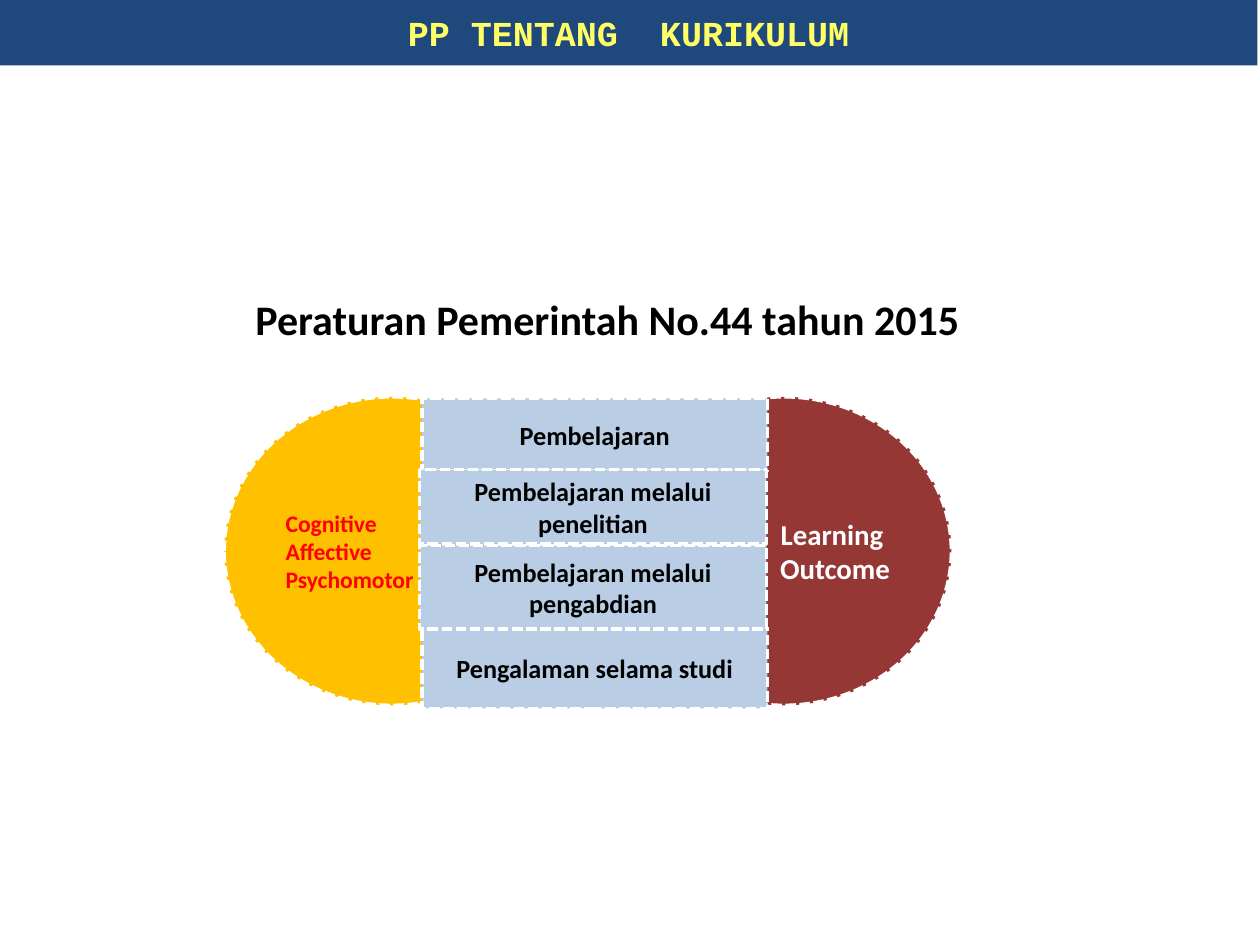
"""Build the curriculum regulation slide."""
from dataclasses import dataclass

from pptx import Presentation
from pptx import util as u
from pptx.dml.color import RGBColor
from pptx.enum import dml, shapes, text


@dataclass(frozen=True)
class Theme:
    navy: str = "1F497D"
    yellow: str = "FFFF66"
    amber: str = "FFC000"
    maroon: str = "953735"
    pale: str = "B9CDE5"
    red: str = "FF0000"
    white: str = "FFFFFF"
    black: str = "000000"
    body: str = "Calibri"
    mono: str = "Courier New"
    heading: float = 24
    banner: float = 20
    outcome: float = 16.5
    step: float = 15
    domain: float = 13.5
    dash: float = 2


@dataclass(frozen=True)
class Box:
    left: float
    top: float
    width: float
    height: float

    def lengths(self) -> tuple:
        return tuple(u.Cm(v) for v in (self.left, self.top, self.width, self.height))


@dataclass(frozen=True)
class Label:
    words: str
    size: float
    color: str
    align: text.PP_ALIGN = text.PP_ALIGN.CENTER
    font: str = Theme.body
    wrap: bool = True


T = Theme()
OVAL, RECT = shapes.MSO_SHAPE.OVAL, shapes.MSO_SHAPE.RECTANGLE
LEFT, RIGHT = text.PP_ALIGN.LEFT, text.PP_ALIGN.RIGHT


def write(sp, label: Label) -> None:
    """Put a label into a shape and format its runs."""
    tf = sp.text_frame
    tf.text = label.words
    tf.word_wrap = label.wrap
    for p in tf.paragraphs:
        p.alignment = label.align
        for r in p.runs:
            r.font.name = label.font
            r.font.size = u.Pt(label.size)
            r.font.bold = True
            r.font.color.rgb = RGBColor.from_string(label.color)


def draw(s, kind: shapes.MSO_SHAPE, box: Box, fill: str, label: Label, dashed: bool = True) -> None:
    """Draw a filled shape with its label."""
    sp = s.shapes.add_shape(kind, *box.lengths())
    sp.shadow.inherit = False
    sp.fill.solid()
    sp.fill.fore_color.rgb = RGBColor.from_string(fill)
    if dashed:
        sp.line.color.rgb = RGBColor.from_string(T.white)
        sp.line.width = u.Pt(T.dash)
        sp.line.dash_style = dml.MSO_LINE.SQUARE_DOT
    else:
        sp.line.fill.background()
    sp.text_frame.vertical_anchor = text.MSO_ANCHOR.MIDDLE
    write(sp, label)


def main() -> None:
    """Compose and save the slide."""
    prs = Presentation()
    prs.slide_width, prs.slide_height = u.Cm(25.4), u.Cm(19.05)
    s = prs.slides.add_slide(prs.slide_layouts[6])

    draw(s, OVAL, Box(4.52, 8, 6.76, 6.22), T.amber,
         Label("Cognitive\nAffective\nPsychomotor", T.domain, T.red, LEFT))
    draw(s, OVAL, Box(12.42, 8, 6.76, 6.22), T.maroon,
         Label("Learning \nOutcome", T.outcome, T.white, RIGHT))

    steps = (
        (Box(8.51, 8.03, 6.96, 1.47), "Pembelajaran"),
        (Box(8.51, 12.65, 6.96, 1.63), "Pengalaman selama studi"),
        (Box(8.46, 9.47, 6.99, 1.5), "Pembelajaran melalui penelitian"),
        (Box(8.46, 11, 6.99, 1.68), "Pembelajaran melalui pengabdian"),
    )
    for box, words in steps:
        draw(s, RECT, box, T.pale, Label(words, T.step, T.black))

    heading = s.shapes.add_textbox(*Box(4.9, 5.79, 15.04, 1.27).lengths())
    write(heading, Label("Peraturan Pemerintah No.44 tahun 2015", T.heading, T.black, LEFT, wrap=False))
    heading.text_frame.auto_size = text.MSO_AUTO_SIZE.SHAPE_TO_FIT_TEXT

    draw(s, RECT, Box(0, 0, 25.35, 1.32), T.navy,
         Label("PP TENTANG  KURIKULUM", T.banner, T.yellow, font=T.mono, wrap=False), dashed=False)
    prs.save("out.pptx")


if __name__ == "__main__":
    main()
